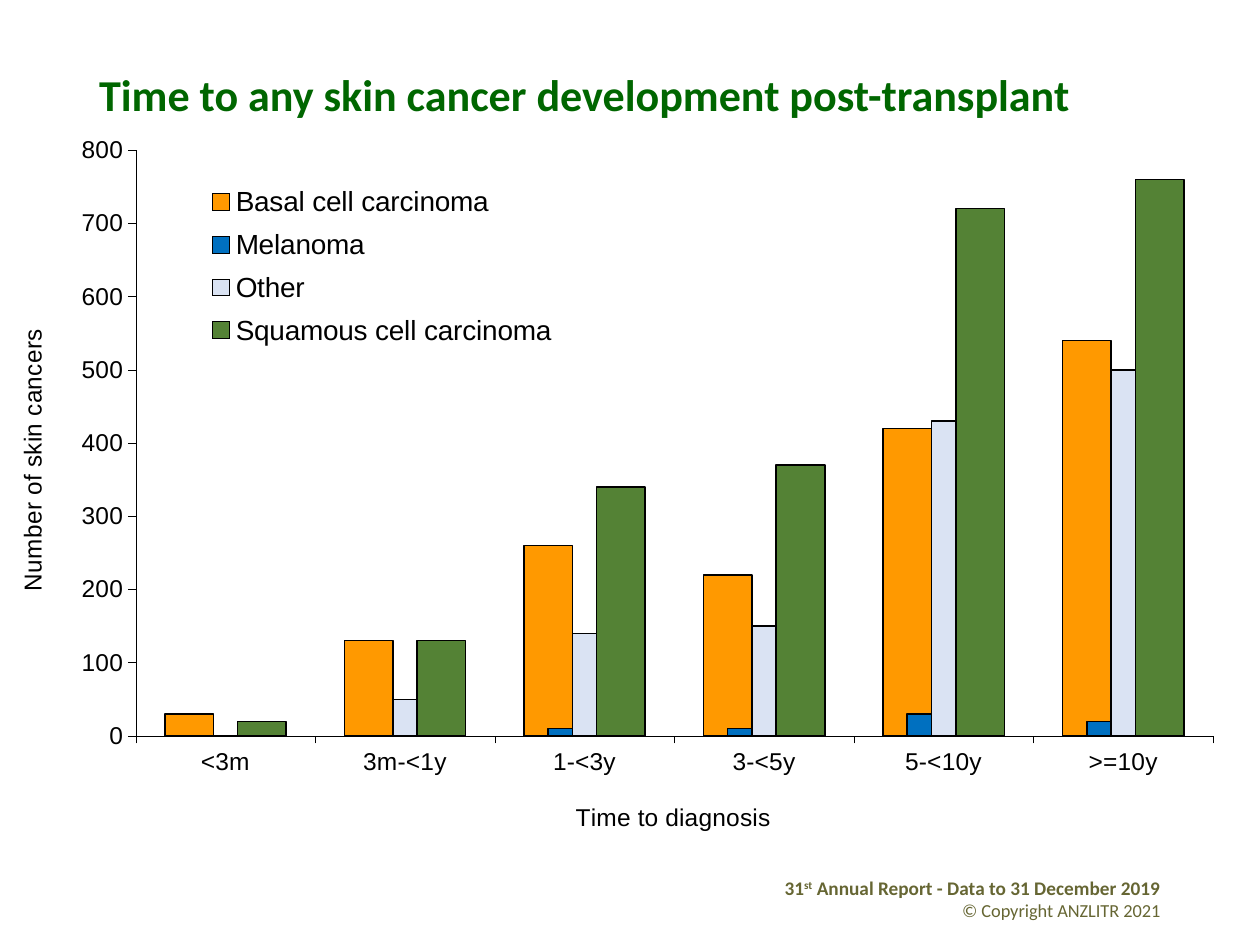
from lxml.etree import SubElement
from pptx import Presentation
from pptx.chart.data import CategoryChartData
from pptx.dml.color import RGBColor
from pptx.enum.chart import XL_CHART_TYPE as ChartType, XL_LEGEND_POSITION as LegendPosition, XL_TICK_MARK as TickMark
from pptx.enum.text import MSO_ANCHOR as Anchor, PP_ALIGN as Align
from pptx.oxml.ns import qn
from pptx.util import Pt

# Content
TITLE = "Time to any skin cancer development post-transplant"
FOOTER = [
    [("31", {}), ("st", {"baseline": "30000"}), (" Annual Report - Data to 31 December 2019", {})],
    [("© Copyright ANZLITR 2021", {"size": 10.5, "bold": False})],
]
CATEGORIES = ["<3m", "3m-<1y", "1-<3y", "3-<5y", "5-<10y", ">=10y"]
SERIES = [
    ("Basal cell carcinoma", "FF9900", (30, 130, 260, 220, 420, 540)),
    ("Melanoma", "0070C0", (0, 0, 10, 10, 30, 20)),
    ("Other", "DAE3F3", (0, 50, 140, 150, 430, 500)),
    ("Squamous cell carcinoma", "548235", (20, 130, 340, 370, 720, 760)),
]

# Places: boxes in points, chart parts as fractions of the chart
TITLE_BOX = (49.4, 28.8, 620.6, 53.3)
CHART_BOX = (-6.8, 71.3, 715, 408)
FOOTER_BOX = (424.1, 497, 246.2, 28.8)
PLOT_AREA = (0.118, 0.036, 0.861, 0.828)
LEGEND_AREA = (0.17, 0.07, 0.29, 0.26)
CATEGORY_TITLE_AT = (0.466, 0.95)
VALUE_TITLE_AT = (0.019, 0.286)


def color(hex_text):
    return RGBColor.from_string(hex_text)


def set_font(font, size, name="Arial", hex_text="000000", bold=False):
    font.size, font.name, font.bold = Pt(size), name, bold
    font.color.rgb = color(hex_text)


def add_text(paragraph, text, baseline=None, **format_options):
    run = paragraph.add_run()
    run.text = text
    set_font(run.font, **format_options)
    if baseline:
        run.font._element.set("baseline", baseline)


def place(shape, box):
    shape.left, shape.top, shape.width, shape.height = map(Pt, box)


def set_line(line, width):
    line.color.rgb = color("000000")
    line.width = Pt(width)


def set_layout(parent, before, fractions, inner=False):
    """Put a manual layout in a chart part, after its child named before (or first)."""
    for old in parent.findall(qn("c:layout")):
        parent.remove(old)
    layout = SubElement(parent, qn("c:layout"))
    previous = parent.find(qn(before)) if before else None
    if previous is None:
        parent.insert(0, layout)
    else:
        previous.addnext(layout)
    manual = SubElement(layout, qn("c:manualLayout"))
    settings = [("layoutTarget", "inner")] if inner else []
    settings += [("xMode", "edge"), ("yMode", "edge")]
    settings += zip("xywh", fractions)
    for tag, value in settings:
        SubElement(manual, qn("c:" + tag)).set("val", str(value))


def format_axis(axis, title, title_at):
    axis.has_major_gridlines = False
    axis.major_tick_mark, axis.minor_tick_mark = TickMark.OUTSIDE, TickMark.NONE
    set_font(axis.tick_labels.font, 14)
    set_line(axis.format.line, 0.22)
    add_text(axis.axis_title.text_frame.paragraphs[0], title, size=14)
    set_layout(axis.axis_title._element, "c:tx", title_at)


def add_cancer_chart(slide):
    data = CategoryChartData()
    data.categories = CATEGORIES
    for name, _, values in SERIES:
        data.add_series(name, values)
    chart = slide.shapes.add_chart(ChartType.COLUMN_CLUSTERED, *map(Pt, CHART_BOX), data).chart
    chart.has_title = False
    set_font(chart.font, 14)

    plot = chart.plots[0]
    plot.gap_width, plot.overlap, plot.vary_by_categories = 120, 50, False
    for series, (_, fill, _) in zip(plot.series, SERIES):
        series.format.fill.solid()
        series.format.fill.fore_color.rgb = color(fill)
        set_line(series.format.line, 0.87)
    set_layout(chart._chartSpace.chart.plotArea, None, PLOT_AREA, inner=True)

    format_axis(chart.category_axis, "Time to diagnosis", CATEGORY_TITLE_AT)
    format_axis(chart.value_axis, "Number of skin cancers", VALUE_TITLE_AT)
    chart.value_axis.minimum_scale, chart.value_axis.maximum_scale = 0, 800
    chart.value_axis.major_unit = 100

    chart.has_legend = True
    chart.legend.position = LegendPosition.RIGHT
    chart.legend.include_in_layout = False
    set_font(chart.legend.font, 16)
    set_layout(chart.legend._element, "c:legendPos", LEGEND_AREA)


def main():
    presentation = Presentation()
    presentation.slide_width, presentation.slide_height = Pt(720), Pt(540)
    slide = presentation.slides.add_slide(presentation.slide_layouts[5])

    # Title
    title = slide.shapes.title
    place(title, TITLE_BOX)
    title.text_frame.vertical_anchor = Anchor.MIDDLE
    paragraph = title.text_frame.paragraphs[0]
    paragraph.alignment, paragraph.line_spacing = Align.LEFT, 0.9
    add_text(paragraph, TITLE, size=25.2, name="Calibri", hex_text="006600", bold=True)

    # Chart
    add_cancer_chart(slide)

    # Footer
    frame = slide.shapes.add_textbox(*map(Pt, FOOTER_BOX)).text_frame
    frame.word_wrap = True
    footer_format = {"size": 11, "name": "Calibri", "hex_text": "666633", "bold": True}
    for index, runs in enumerate(FOOTER):
        paragraph = frame.add_paragraph() if index else frame.paragraphs[0]
        paragraph.alignment = Align.RIGHT
        for text, changes in runs:
            add_text(paragraph, text, **{**footer_format, **changes})

    presentation.save("out.pptx")


if __name__ == "__main__":
    main()
